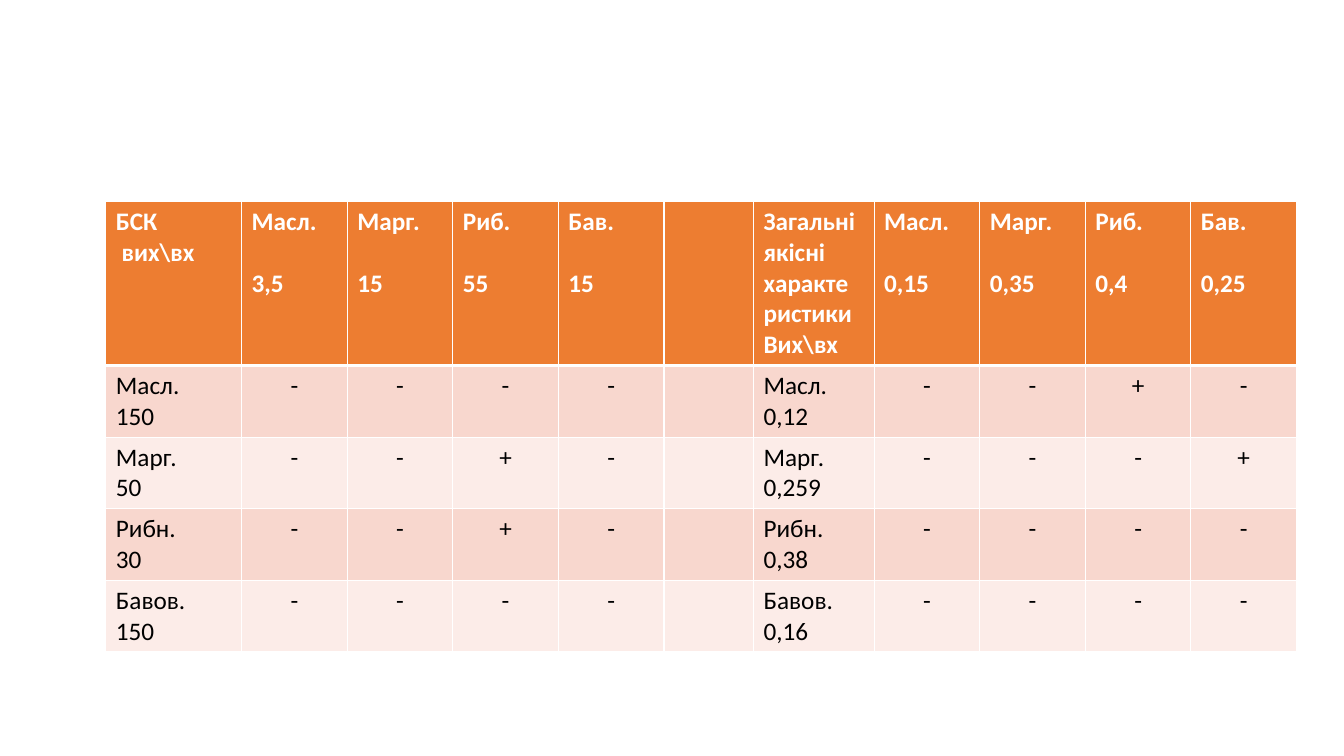
import pptx
import pptx.dml.color
import pptx.enum.text
import pptx.oxml
import pptx.oxml.ns
import pptx.util

Inches = pptx.util.Inches
Pt = pptx.util.Pt
ALIGN = pptx.enum.text.PP_ALIGN

COLORS = {
    "header": "ED7D31",
    "odd_row": "F8D7CE",
    "even_row": "FCECE8",
    "border": "FFFFFF",
    "header_text": "FFFFFF",
    "body_text": "000000",
}
COLUMN_WIDTHS = [1.35] + [1.05] * 4 + [0.89, 1.2] + [1.05] * 4
ROW_HEIGHTS = [1.62] + [0.71] * 4
PRODUCTS = ["Масл.", "Марг.", "Риб.", "Бав."]
ROW_PRODUCTS = ["Масл.", "Марг.", "Рибн.", "Бавов."]
BALANCE = {
    "title": ["БСК", " вих\\вх"],
    "inputs": ["3,5", "15", "55", "15"],
    "outputs": ["150", "50", "30", "150"],
    "signs": ["----", "--+-", "--+-", "----"],
}
QUALITY = {
    "title": ["Загальні якісні характе ристики", "Вих\\вх"],
    "inputs": ["0,15", "0,35", "0,4", "0,25"],
    "outputs": ["0,12", "0,259", "0,38", "0,16"],
    "signs": ["--+-", "---+", "----", "----"],
}


def rgb(name):
    return pptx.dml.color.RGBColor.from_string(COLORS[name])


def write_text(text_frame, lines, color="body_text", bold=False, align=ALIGN.LEFT, gap=0):
    for index, line in enumerate(lines):
        paragraph = text_frame.paragraphs[0] if index == 0 else text_frame.add_paragraph()
        paragraph.alignment = align
        if index:
            paragraph.space_before = Pt(gap)
        run = paragraph.add_run()
        run.text = line
        run.font.name = "Calibri"
        run.font.size = Pt(18)
        run.font.bold = bold
        run.font.color.rgb = rgb(color)


def set_borders(cell, widths):
    properties = cell._tc.get_or_add_tcPr()
    for index, (side, width) in enumerate(widths.items()):
        line = pptx.oxml.parse_xml(
            f'<a:ln{side} {pptx.oxml.ns.nsdecls("a")} w="{Pt(width)}">'
            f'<a:solidFill><a:srgbClr val="{COLORS["border"]}"/></a:solidFill></a:ln{side}>'
        )
        properties.insert(index, line)


def style_cell(cell, row):
    cell.fill.solid()
    fill = "header" if row == 0 else "odd_row" if row % 2 else "even_row"
    cell.fill.fore_color.rgb = rgb(fill)
    top = 3 if row == 1 else 1
    bottom = 3 if row == 0 else 1
    set_borders(cell, {"L": 1, "R": 1, "T": top, "B": bottom})


def fill_matrix(table, first_column, matrix):
    header = {"color": "header_text", "bold": True}
    write_text(table.cell(0, first_column).text_frame, matrix["title"], **header)
    for offset, labels in enumerate(zip(PRODUCTS, matrix["inputs"]), 1):
        cell = table.cell(0, first_column + offset)
        write_text(cell.text_frame, labels, gap=22, **header)
    rows = zip(ROW_PRODUCTS, matrix["outputs"], matrix["signs"])
    for row, (product, output, signs) in enumerate(rows, 1):
        write_text(table.cell(row, first_column).text_frame, [product, output])
        for offset, sign in enumerate(signs, 1):
            cell = table.cell(row, first_column + offset)
            write_text(cell.text_frame, [sign], align=ALIGN.CENTER)


def add_comparison_table(slide, left, top, width, height):
    frame = slide.shapes.add_table(
        len(ROW_HEIGHTS), len(COLUMN_WIDTHS),
        Inches(left), Inches(top), Inches(width), Inches(height),
    )
    table = frame.table
    for column, share in zip(table.columns, COLUMN_WIDTHS):
        column.width = Inches(width * share / sum(COLUMN_WIDTHS))
    for row, share in zip(table.rows, ROW_HEIGHTS):
        row.height = Inches(height * share / sum(ROW_HEIGHTS))
    for row_index, row in enumerate(table.rows):
        for cell in row.cells:
            style_cell(cell, row_index)
    fill_matrix(table, 0, BALANCE)
    fill_matrix(table, 6, QUALITY)


def main():
    presentation = pptx.Presentation()
    presentation.slide_width = Inches(13.33)
    presentation.slide_height = Inches(7.5)
    slide = presentation.slides.add_slide(presentation.slide_layouts[6])
    add_comparison_table(slide, 1.05, 2, 11.81, 4.46)
    presentation.save("out.pptx")


if __name__ == "__main__":
    main()
